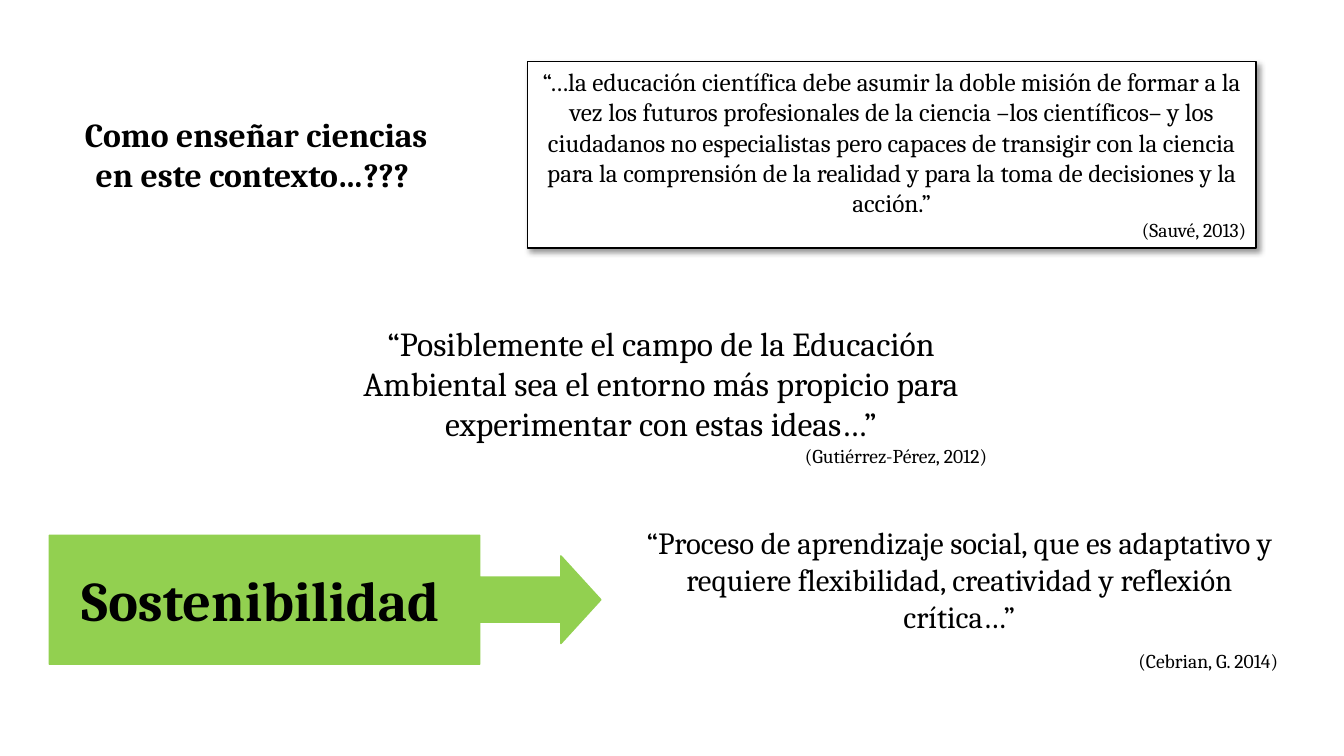
from lxml import etree
from pptx import Presentation
from pptx.dml.color import RGBColor
from pptx.enum.shapes import MSO_SHAPE as Shape
from pptx.enum.text import MSO_ANCHOR as Anchor, MSO_AUTO_SIZE as AutoSize, PP_ALIGN as Align
from pptx.oxml.ns import qn
from pptx.util import Inches, Pt

COLORS = {"text": "000000", "paper": "FFFFFF", "accent": "92D050"}
FONT = "Cambria"


def rgb(name):
    return RGBColor.from_string(COLORS[name])


def add_box(shapes, kind, place, fill, line):
    """Preset shape with a solid fill and a 1 pt outline."""
    box = shapes.add_shape(kind, *map(Inches, place))
    box.fill.solid()
    box.fill.fore_color.rgb = rgb(fill)
    box.line.color.rgb = rgb(line)
    box.line.width = Pt(1)
    box.shadow.inherit = False
    return box


def add_soft_shadow(box):
    effects = box.element.spPr.find(qn("a:effectLst"))
    shadow = etree.SubElement(effects, qn("a:outerShdw"), blurRad=str(Pt(4)),
                              dist=str(Pt(3)), dir="2700000", algn="tl", rotWithShape="0")
    color = etree.SubElement(shadow, qn("a:srgbClr"), val=COLORS["text"])
    etree.SubElement(color, qn("a:alpha"), val="40000")


def prepare_frame(shape):
    frame = shape.text_frame
    frame.word_wrap = True
    frame.auto_size = AutoSize.SHAPE_TO_FIT_TEXT
    frame.vertical_anchor = Anchor.TOP
    return frame


def style(paragraph, size, align, bold=False):
    paragraph.alignment = align
    font = paragraph.font
    font.name, font.size, font.bold = FONT, Pt(size), bold
    font.color.rgb = rgb("text")


def add_heading(shapes, place, text, size, align):
    frame = prepare_frame(shapes.add_textbox(*map(Inches, place)))
    heading = frame.paragraphs[0]
    heading.text = text
    style(heading, size, align, bold=True)


def write_quote(shape, quote, size, source):
    """Centred quotation followed by its right-aligned source."""
    frame = prepare_frame(shape)
    quotation = frame.paragraphs[0]
    quotation.text = quote
    style(quotation, size, Align.CENTER)
    citation = frame.add_paragraph()
    citation.text = source
    style(citation, 14, Align.RIGHT)
    return citation


def add_quote(shapes, place, quote, size, source):
    return write_quote(shapes.add_textbox(*map(Inches, place)), quote, size, source)


def main():
    prs = Presentation()
    prs.slide_width, prs.slide_height = Inches(13.33), Inches(7.5)
    shapes = prs.slides.add_slide(prs.slide_layouts[6]).shapes

    # Opening question and framed quotation
    framed = add_box(shapes, Shape.RECTANGLE, (5.23, 0.61, 7.23, 1.85), "paper", "text")
    add_soft_shadow(framed)
    write_quote(
        framed,
        "“…la educación científica debe asumir la doble misión de formar a la vez "
        "los futuros profesionales de la ciencia –los científicos– y los ciudadanos "
        "no especialistas pero capaces de transigir con la ciencia para la comprensión "
        "de la realidad y para la toma de decisiones y la acción.”",
        18, "(Sauvé, 2013)")
    add_heading(shapes, (0.62, 1.08, 3.84, 0.91),
                "Como enseñar ciencias en este contexto…??? ", 24, Align.CENTER)

    # Sustainability callout and its definition
    sustainability = shapes.add_group_shape().shapes
    definition = add_quote(
        sustainability, (6.18, 5.15, 6.67, 1.62),
        "“Proceso de aprendizaje social, que es adaptativo y requiere flexibilidad, "
        "creatividad y reflexión crítica…”",
        22, "(Cebrian, G. 2014)")
    line_end = definition.add_run()
    line_end.text = " "
    line_end.font.size = Pt(24)
    callout = add_box(sustainability, Shape.RIGHT_ARROW_CALLOUT,
                      (0.49, 5.31, 5.47, 1.28), "accent", "accent")
    for index, value in enumerate((0.35, 0.34, 0.31, 0.78)):
        callout.adjustments[index] = value
    add_heading(sustainability, (0.71, 5.56, 3.88, 0.77), "Sostenibilidad", 40, Align.LEFT)

    # Environmental education quotation
    add_quote(
        shapes, (3.22, 3.15, 6.67, 1.55),
        "“Posiblemente el campo de la Educación Ambiental sea el entorno más propicio "
        "para experimentar con estas ideas…”",
        24, "(Gutiérrez-Pérez, 2012)")

    prs.save("out.pptx")


if __name__ == "__main__":
    main()
